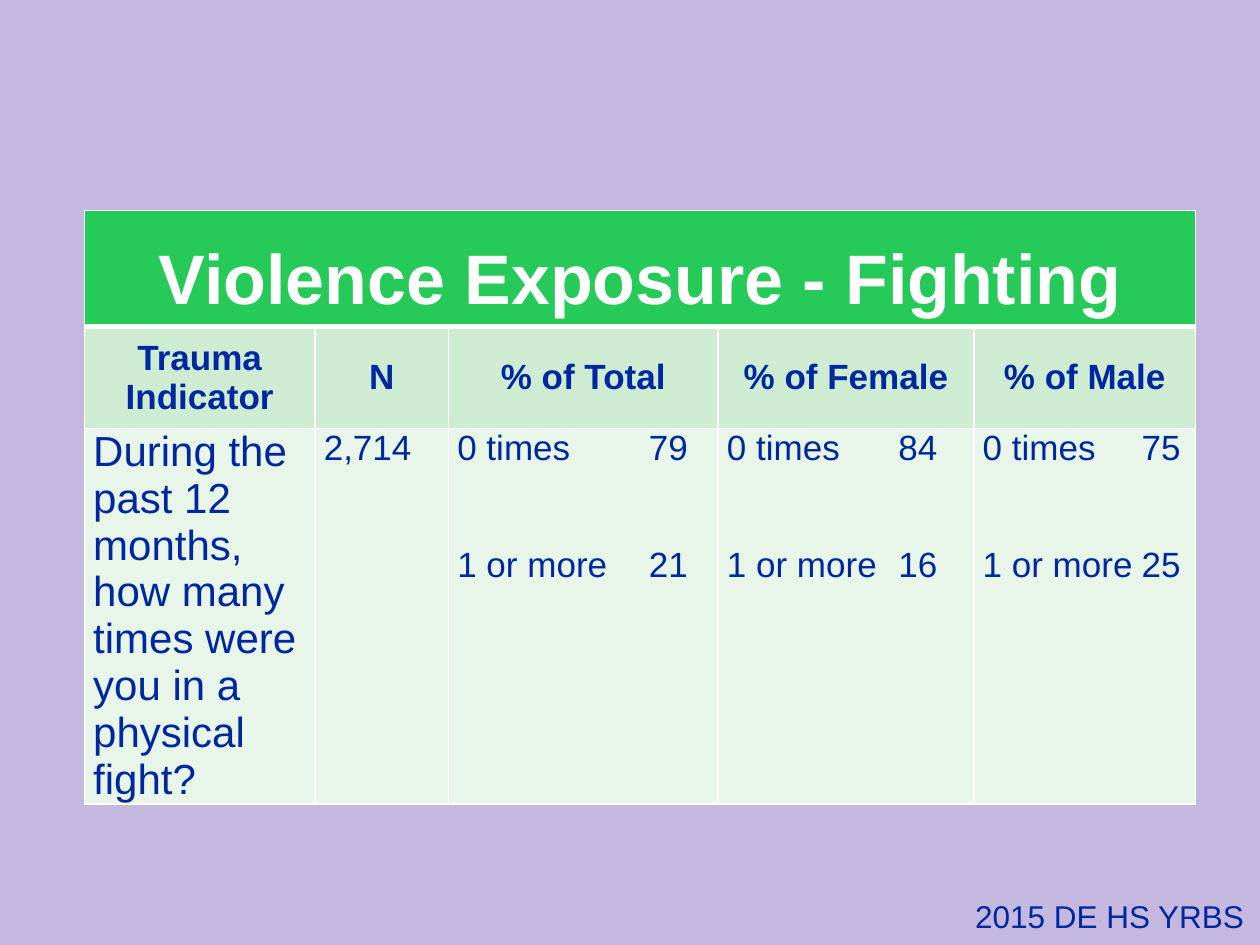
from lxml.etree import SubElement
from pptx import Presentation
from pptx.dml.color import RGBColor
from pptx.enum.text import MSO_ANCHOR, PP_ALIGN
from pptx.oxml import parse_xml
from pptx.oxml.ns import nsdecls, qn
from pptx.util import Inches, Pt

COLORS = {"background": "C5B8DF", "title": "26CA59", "header": "CDECD1",
          "body": "E8F6EA", "text": "00279F", "white": "FFFFFF"}
FONT = "Arial"

TITLE = "Violence Exposure - Fighting"
HEADERS = ["Trauma Indicator", "N", "% of Total", "% of Female", "% of Male"]
QUESTION = "During the past 12 months, how many times were you in a physical fight?"
SAMPLE = "2,714"
ANSWERS = ["0 times", "1 or more"]
# Percentages in answer order, and the right tab stop they align to
RESULTS = [((79, 21), 1.83), ((84, 16), 1.67), ((75, 25), 1.57)]
SOURCE = "2015 DE HS YRBS"

COLUMN_WIDTHS = [1.83, 1.06, 2.14, 2.03, 1.76]
ROW_HEIGHTS = [0.92, 0.81, 2.98]


def rgb(name):
    return RGBColor.from_string(COLORS[name])


def set_font(p, size, color="text", bold=False):
    p.font.name = FONT
    p.font.size = Pt(size)
    p.font.bold = bold
    p.font.color.rgb = rgb(color)


def add_right_tab(p, position):
    tabs = SubElement(p._p.get_or_add_pPr(), qn("a:tabLst"))
    SubElement(tabs, qn("a:tab"), pos=str(Inches(position)), algn="r")


def set_borders(cell, bottom=1):
    tcPr = cell._tc.get_or_add_tcPr()
    widths = {"lnL": 1, "lnR": 1, "lnT": 1, "lnB": bottom}
    for i, (side, width) in enumerate(widths.items()):
        tcPr.insert(i, parse_xml(
            f'<a:{side} {nsdecls("a")} w="{Pt(width)}"><a:solidFill>'
            f'<a:srgbClr val="{COLORS["white"]}"/></a:solidFill></a:{side}>'))


def format_cell(cell, fill, anchor=MSO_ANCHOR.TOP, bottom=1):
    cell.fill.solid()
    cell.fill.fore_color.rgb = rgb(fill)
    cell.margin_left = cell.margin_right = Inches(0.07)
    cell.margin_top = cell.margin_bottom = 0
    cell.vertical_anchor = anchor
    set_borders(cell, bottom)


def write_cell(cell, text, size, color="text", bold=False, align=PP_ALIGN.LEFT):
    p = cell.text_frame.paragraphs[0]
    p.text = text
    p.alignment = align
    set_font(p, size, color, bold)


def write_results(cell, values, tab):
    tf = cell.text_frame
    for i, (answer, value) in enumerate(zip(ANSWERS, values)):
        p = tf.add_paragraph() if i else tf.paragraphs[0]
        p.text = f"{answer}\t{value}"
        if i:
            p.space_before = Pt(45)
        add_right_tab(p, tab)
        set_font(p, 20)


prs = Presentation()
prs.slide_width, prs.slide_height = Inches(10), Inches(7.5)
s = prs.slides.add_slide(prs.slide_layouts[6])
s.background.fill.solid()
s.background.fill.fore_color.rgb = rgb("background")

table = s.shapes.add_table(
    len(ROW_HEIGHTS), len(COLUMN_WIDTHS), Inches(0.67), Inches(1.67),
    Inches(sum(COLUMN_WIDTHS)), Inches(sum(ROW_HEIGHTS))).table
table.horz_banding = False
for column, width in zip(table.columns, COLUMN_WIDTHS):
    column.width = Inches(width)
for row, height in zip(table.rows, ROW_HEIGHTS):
    row.height = Inches(height)

for c, header in enumerate(HEADERS):
    format_cell(table.cell(0, c), "title", MSO_ANCHOR.MIDDLE, bottom=3)
    format_cell(table.cell(1, c), "header", MSO_ANCHOR.MIDDLE)
    format_cell(table.cell(2, c), "body")
    write_cell(table.cell(1, c), header, 20, bold=True, align=PP_ALIGN.CENTER)

title = table.cell(0, 0)
title.merge(table.cell(0, len(HEADERS) - 1))
title.margin_top = Inches(0.19)
write_cell(title, TITLE, 40, "white", True, PP_ALIGN.CENTER)
write_cell(table.cell(2, 0), QUESTION, 24)
write_cell(table.cell(2, 1), SAMPLE, 20)
for c, (values, tab) in enumerate(RESULTS, start=2):
    write_results(table.cell(2, c), values, tab)

source = s.shapes.add_textbox(Inches(7.64), Inches(7.07), Inches(2.36), Inches(0.4))
source.text_frame.word_wrap = False
p = source.text_frame.paragraphs[0]
p.text = SOURCE
set_font(p, 18)

prs.save("out.pptx")
